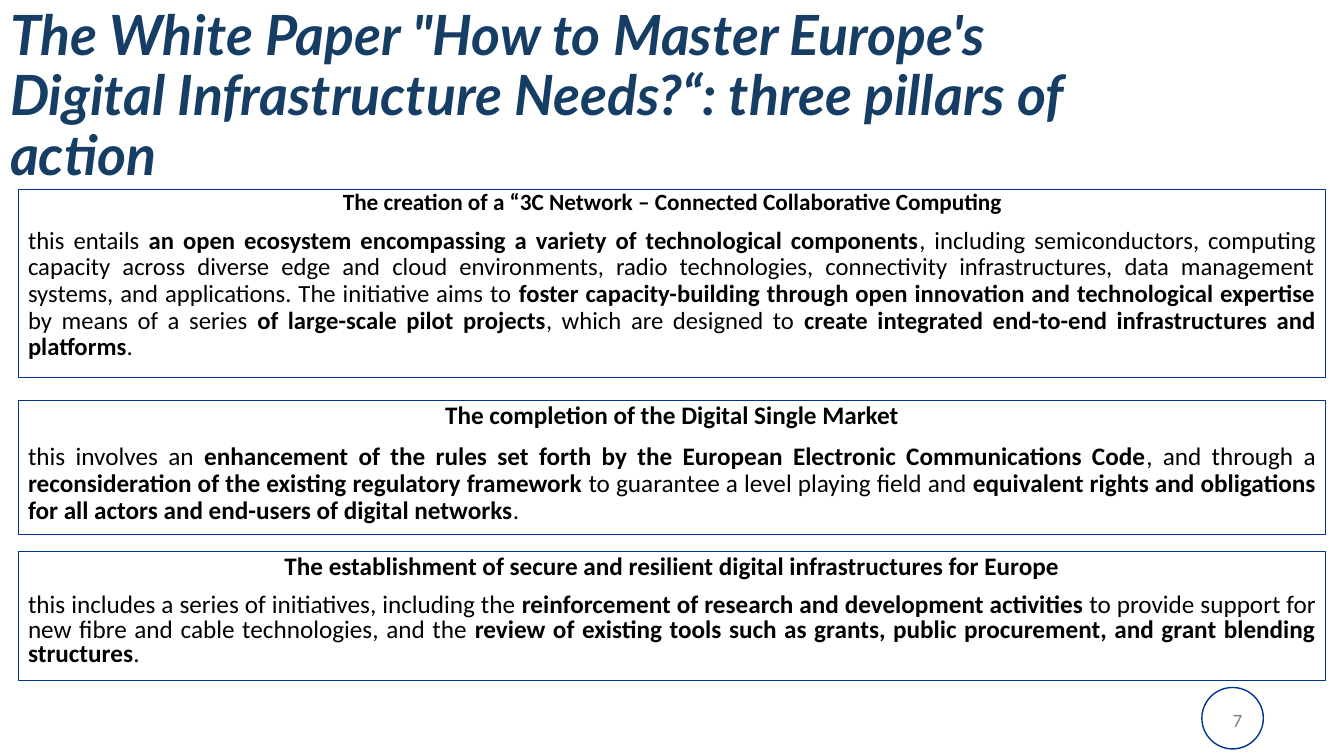
"""Build the slide on the three pillars of action of the White Paper."""
from pptx import Presentation
from pptx.dml.color import RGBColor
from pptx.enum.shapes import MSO_SHAPE
from pptx.enum.text import MSO_ANCHOR, PP_ALIGN
from pptx.util import Inches, Pt

TITLE = "The White Paper \"How to Master Europe's Digital Infrastructure Needs?“: three pillars of action"
PAGE_NUMBER = "7"
NAVY, BLUE, BLACK, GREY = "163E64", "003399", "000000", "797979"
BOX_LEFT, BOX_WIDTH = 0.18, 12.97

# Body parts alternate between regular and bold, starting with regular.
PILLARS = [
    {
        "top": 1.88, "height": 1.87,
        "heading": "The creation of a “3C Network – Connected Collaborative Computing",
        "heading_size": 16.6, "heading_spacing": 0.7,
        "body_size": 17.6, "body_spacing": 0.9,
        "body": [
            "this entails ",
            "an open ecosystem encompassing a variety of technological components",
            ", including semiconductors, computing capacity across diverse edge and cloud "
            "environments, radio technologies, connectivity infrastructures, data management "
            "systems, and applications. The initiative aims to ",
            "foster capacity-building through open innovation and technological expertise ",
            "by means of a series ",
            "of large-scale pilot projects",
            ", which are designed to ",
            "create integrated end-to-end infrastructures and platforms",
            ".",
        ],
    },
    {
        "top": 3.97, "height": 1.33,
        "heading": "The completion of the Digital Single Market",
        "heading_size": 18, "heading_spacing": 0.8,
        "body_size": 18, "body_spacing": 0.9,
        "body": [
            "this involves an ",
            "enhancement of the rules set forth by the European Electronic Communications Code",
            ", and through a ",
            "reconsideration of the existing regulatory framework ",
            "to guarantee a level playing field and ",
            "equivalent rights and obligations for all actors and end-users of digital networks",
            ".",
        ],
    },
    {
        "top": 5.47, "height": 1.28,
        "heading": "The establishment of secure and resilient digital infrastructures for Europe",
        "heading_size": 18, "heading_spacing": 0.8,
        "body_size": 18, "body_spacing": 0.8,
        "body": [
            "this includes a series of initiatives, including the ",
            "reinforcement of research and development activities ",
            "to provide support for new fibre and cable technologies, and the ",
            "review of existing tools such as grants, public procurement, and grant blending structures",
            ".",
        ],
    },
]


def color(value):
    return RGBColor.from_string(value)


def style(para, name, size, value, align, spacing=1.0):
    para.font.name = name
    para.font.size = Pt(size)
    para.font.color.rgb = color(value)
    para.alignment = align
    para.line_spacing = spacing


def add_outline(page, kind, left, top, width, height, line_width):
    shape = page.shapes.add_shape(kind, Inches(left), Inches(top), Inches(width), Inches(height))
    shape.shadow.inherit = False
    shape.fill.background()
    shape.line.color.rgb = color(BLUE)
    shape.line.width = Pt(line_width)
    return shape


def add_title(page):
    title = page.shapes.title
    title.left, title.top = Inches(0), Inches(0.02)
    title.width, title.height = Inches(11.5), Inches(1.89)
    frame = title.text_frame
    frame.text = TITLE
    frame.word_wrap = True
    frame.vertical_anchor = MSO_ANCHOR.MIDDLE
    para = frame.paragraphs[0]
    style(para, "Lato", 39.6, NAVY, PP_ALIGN.LEFT, 0.9)
    para.font.bold = para.font.italic = True


def add_page_number(page):
    add_outline(page, MSO_SHAPE.OVAL, 11.92, 6.82, 0.61, 0.61, 1)
    box = page.shapes.add_textbox(Inches(9.42), Inches(6.95), Inches(3), Inches(0.4))
    frame = box.text_frame
    frame.word_wrap = True
    frame.vertical_anchor = MSO_ANCHOR.MIDDLE
    frame.text = PAGE_NUMBER
    style(frame.paragraphs[0], "Lato", 12, GREY, PP_ALIGN.RIGHT)


def add_pillar(page, pillar):
    box = add_outline(page, MSO_SHAPE.RECTANGLE, BOX_LEFT, pillar["top"],
                      BOX_WIDTH, pillar["height"], 0.75)
    frame = box.text_frame
    frame.word_wrap = True
    frame.vertical_anchor = MSO_ANCHOR.TOP
    heading = frame.paragraphs[0]
    heading.text = pillar["heading"]
    style(heading, "Calibri", pillar["heading_size"], BLACK, PP_ALIGN.CENTER,
          pillar["heading_spacing"])
    heading.font.bold = True
    body = frame.add_paragraph()
    style(body, "Calibri", pillar["body_size"], BLACK, PP_ALIGN.JUSTIFY, pillar["body_spacing"])
    body.space_before = Pt(10)
    for index, text in enumerate(pillar["body"]):
        span = body.add_run()
        span.text = text
        span.font.bold = index % 2 == 1


def main():
    deck = Presentation()
    deck.slide_width, deck.slide_height = Inches(13.33), Inches(7.5)
    page = deck.slides.add_slide(deck.slide_layouts[5])
    add_page_number(page)
    add_title(page)
    for pillar in PILLARS:
        add_pillar(page, pillar)
    deck.save("out.pptx")


if __name__ == "__main__":
    main()
